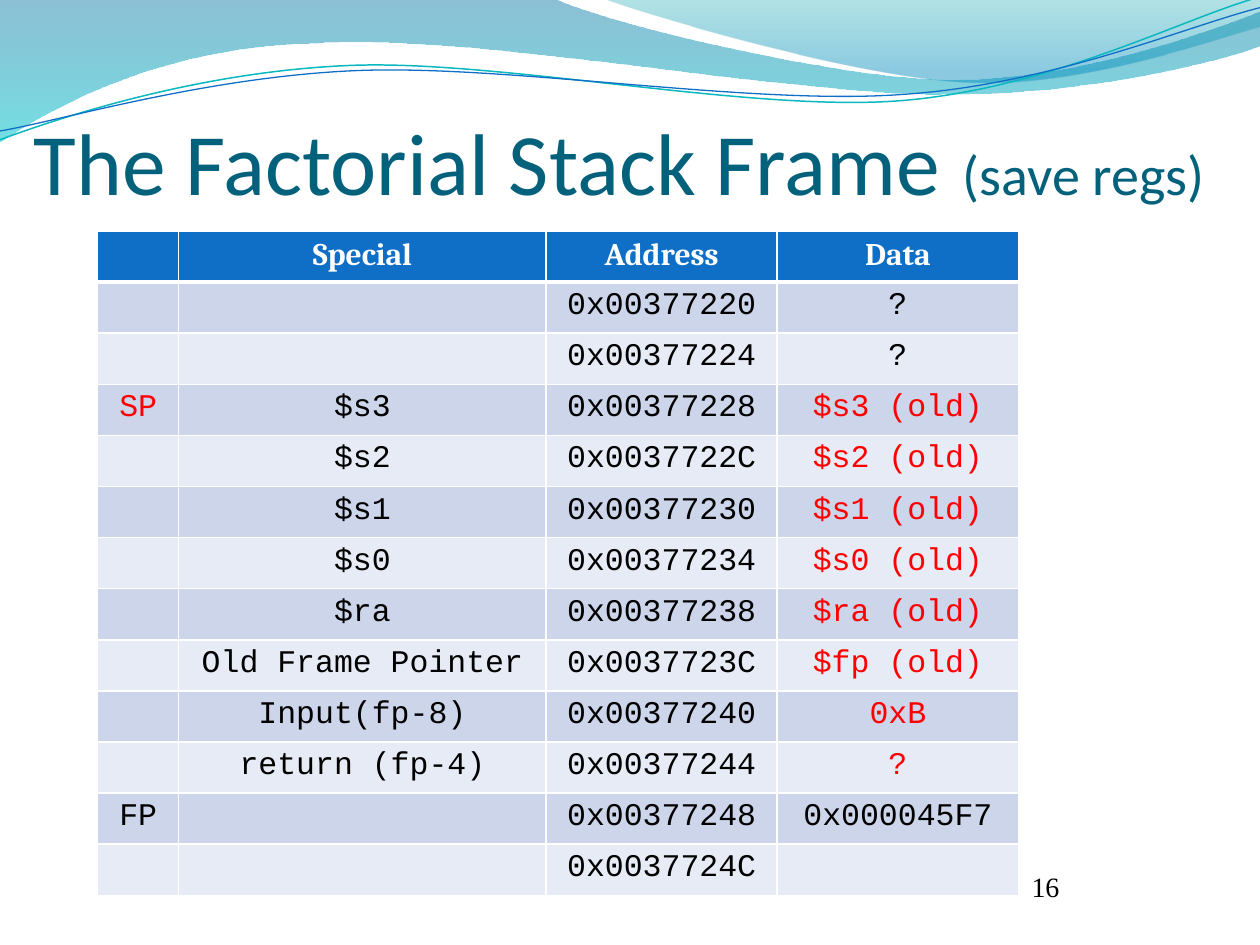
import lxml.etree
import pptx
import pptx.dml.color
import pptx.enum.text
import pptx.oxml.ns
import pptx.util

Pt = pptx.util.Pt
qn = pptx.oxml.ns.qn

BLACK, WHITE, RED = "000000", "FFFFFF", "FF0000"
BLUE, TEAL, TITLE_COLOUR = "0F6FC6", "0AB8BF", "04617B"
BANDS = ("CCD5EA", "E7EBF5")

# Outlines: a start point, then sides with one point (straight) or three (Bezier).
LOWER_WAVE = [
    [(0, 0)],
    [(316.8, -0.7)],
    [(342.7, 12.2), (478, 45.4), (545.8, 45.4)],
    [(614.2, 45.4), (689.8, 18.7), (720, 6.5)],
    [(720.7, 25.9)],
    [(707.8, 31.7), (626.4, 54.7), (537.1, 54)],
    [(447.8, 54), (275, 20.2), (185, 24.5)],
    [(92.9, 25.9), (33.1, 59.8), (-0.7, 81.4)],
]
UPPER_WAVE = [
    [(344.9, -0.7)],
    [(366.5, 7.9), (491, 44.6), (553.7, 46.8)],
    [(616.3, 49.7), (691.9, 23), (720, 15.1)],
    [(720, 0)],
]
TEAL_CURVE = [
    [(-1.4, 62.9)],
    [(33.7, 51.7), (114, 29.4), (199.8, 29.9)],
    [(284.8, 30.3), (425.8, 67.2), (512.4, 64.9)],
    [(599, 62.4), (676.4, 25.7), (720.2, 15.6)],
]
BLUE_CURVE = [
    [(-1.2, 57.9)],
    [(33, 53.8), (118.3, 32.5), (204, 33)],
    [(290.5, 33.5), (428.9, 63.8), (515.5, 61.3)],
    [(601.3, 59.6), (678.5, 30.1), (721.4, 21.4)],
]
CURVE_ROTATION = 357.3

HEADINGS = ("", "Special", "Address", "Data")
COLUMN_WIDTHS = (46.3, 210, 132, 138)
ROW_HEIGHT = 29.2
FIRST_ADDRESS = 0x00377220
WORD_SIZE = 4
STACK = [  # pointer, special, data
    ("", "", "?"),
    ("", "", "?"),
    ("SP", "$s3", "$s3 (old)"),
    ("", "$s2", "$s2 (old)"),
    ("", "$s1", "$s1 (old)"),
    ("", "$s0", "$s0 (old)"),
    ("", "$ra", "$ra (old)"),
    ("", "Old Frame Pointer", "$fp (old)"),
    ("", "Input(fp-8)", "0xB"),
    ("", "return (fp-4)", "?"),
    ("FP", "", "0x000045F7"),
    ("", "", ""),
]
FRAME_ROWS = range(2, 10)


def colour(value):
    return pptx.dml.color.RGBColor.from_string(value)


def format_font(font, name, size, value, bold=False):
    font.name, font.size, font.bold = name, Pt(size), bold
    font.color.rgb = colour(value)


def add_outline(slide, segments, close):
    """Add a freeform, joining each three-point side into one Bezier curve."""
    start, *others = [(Pt(x), Pt(y)) for segment in segments for x, y in segment]
    builder = slide.shapes.build_freeform(*start)
    builder.add_line_segments(others, close=close)
    shape = builder.convert_to_shape()
    shape.shadow.inherit = False
    sides = iter(list(shape.element.iter(qn("a:lnTo"))))
    for segment in segments[1:]:
        first, *rest = [next(sides) for _ in segment]
        if rest:
            curve = lxml.etree.Element(qn("a:cubicBezTo"))
            first.addprevious(curve)
            for side in (first, *rest):
                curve.append(side[0])
                side.getparent().remove(side)
    return shape


def add_wave(slide, segments, stops):
    """Add a wave filled from top to bottom; stops hold position, colour, opacity."""
    shape = add_outline(slide, segments, close=True)
    shape.line.fill.background()
    shape.fill.gradient()
    shape.fill.gradient_angle = 270
    for stop, (position, value, _) in zip(shape.fill.gradient_stops, stops):
        stop.position = position
        stop.color.rgb = colour(value)
    for element, (_, _, opacity) in zip(shape.element.iter(qn("a:srgbClr")), stops):
        lxml.etree.SubElement(element, qn("a:alpha"), val=str(opacity * 1000))


def add_curve(slide, segments, value, width):
    shape = add_outline(slide, segments, close=False)
    shape.rotation = CURVE_ROTATION
    shape.fill.background()
    shape.line.color.rgb = colour(value)
    shape.line.width = Pt(width)


def format_title(slide):
    title = slide.shapes.title
    title.left, title.top, title.width, title.height = Pt(12), Pt(54), Pt(684), Pt(48)
    frame = title.text_frame
    frame.auto_size = pptx.enum.text.MSO_AUTO_SIZE.NONE
    frame.vertical_anchor = pptx.enum.text.MSO_ANCHOR.TOP
    paragraph = frame.paragraphs[0]
    paragraph.alignment = pptx.enum.text.PP_ALIGN.LEFT
    for text, size in (("The Factorial Stack Frame", 50), (" ", 54), ("(save regs)", 32)):
        run = paragraph.add_run()
        run.text = text
        format_font(run.font, "Calibri", size, TITLE_COLOUR)
    title.element.getparent().append(title.element)


def add_slide_number(slide):
    box = slide.shapes.add_textbox(Pt(589.5), Pt(486), Pt(78), Pt(30))
    frame = box.text_frame
    frame.word_wrap = True
    frame.margin_left = frame.margin_top = frame.margin_right = frame.margin_bottom = 0
    frame.vertical_anchor = pptx.enum.text.MSO_ANCHOR.BOTTOM
    paragraph = frame.paragraphs[0]
    paragraph.text = "16"
    format_font(paragraph.font, "Times New Roman", 16, BLACK)


def set_borders(cell, top, bottom):
    properties = cell._tc.get_or_add_tcPr()
    widths = {"a:lnL": 1, "a:lnR": 1, "a:lnT": top, "a:lnB": bottom}
    for index, (tag, width) in enumerate(widths.items()):
        line = lxml.etree.Element(qn(tag), w=str(Pt(width)))
        fill = lxml.etree.SubElement(line, qn("a:solidFill"))
        lxml.etree.SubElement(fill, qn("a:srgbClr"), val=WHITE)
        properties.insert(index, line)


def fill_cell(cell, text, background, font_name, text_colour, bold=False):
    cell.fill.solid()
    cell.fill.fore_color.rgb = colour(background)
    paragraph = cell.text_frame.paragraphs[0]
    paragraph.text = text
    paragraph.alignment = pptx.enum.text.PP_ALIGN.CENTER
    format_font(paragraph.font, font_name, 18, text_colour, bold)


def add_stack_table(slide):
    row_count = len(STACK) + 1
    table = slide.shapes.add_table(
        row_count, len(HEADINGS), Pt(55.8), Pt(132),
        Pt(sum(COLUMN_WIDTHS)), Pt(ROW_HEIGHT * row_count)).table
    for column, width in zip(table.columns, COLUMN_WIDTHS):
        column.width = Pt(width)
    for row in table.rows:
        row.height = Pt(ROW_HEIGHT)
    for column, heading in enumerate(HEADINGS):
        cell = table.cell(0, column)
        fill_cell(cell, heading, BLUE, "Cambria", WHITE, bold=True)
        set_borders(cell, 1, 3)
    for index, (pointer, special, data) in enumerate(STACK):
        address = f"0x{FIRST_ADDRESS + WORD_SIZE * index:08X}"
        for column, text in enumerate((pointer, special, address, data)):
            is_red = text == "SP" or (column == 3 and index in FRAME_ROWS)
            cell = table.cell(index + 1, column)
            fill_cell(cell, text, BANDS[index % 2], "Courier New", RED if is_red else BLACK)
            set_borders(cell, 3 if index == 0 else 1, 1)


def main():
    presentation = pptx.Presentation()
    presentation.slide_width, presentation.slide_height = Pt(720), Pt(540)
    slide = presentation.slides.add_slide(presentation.slide_layouts[5])
    add_wave(slide, LOWER_WAVE, [(0, "0074A1", 45), (1, "00C6CF", 55)])
    add_wave(slide, UPPER_WAVE, [(0, "00A1A9", 30), (0.8, "008BBF", 45)])
    add_curve(slide, TEAL_CURVE, TEAL, 0.85)
    add_curve(slide, BLUE_CURVE, BLUE, 0.75)
    add_slide_number(slide)
    format_title(slide)
    add_stack_table(slide)
    presentation.save("out.pptx")


if __name__ == "__main__":
    main()
